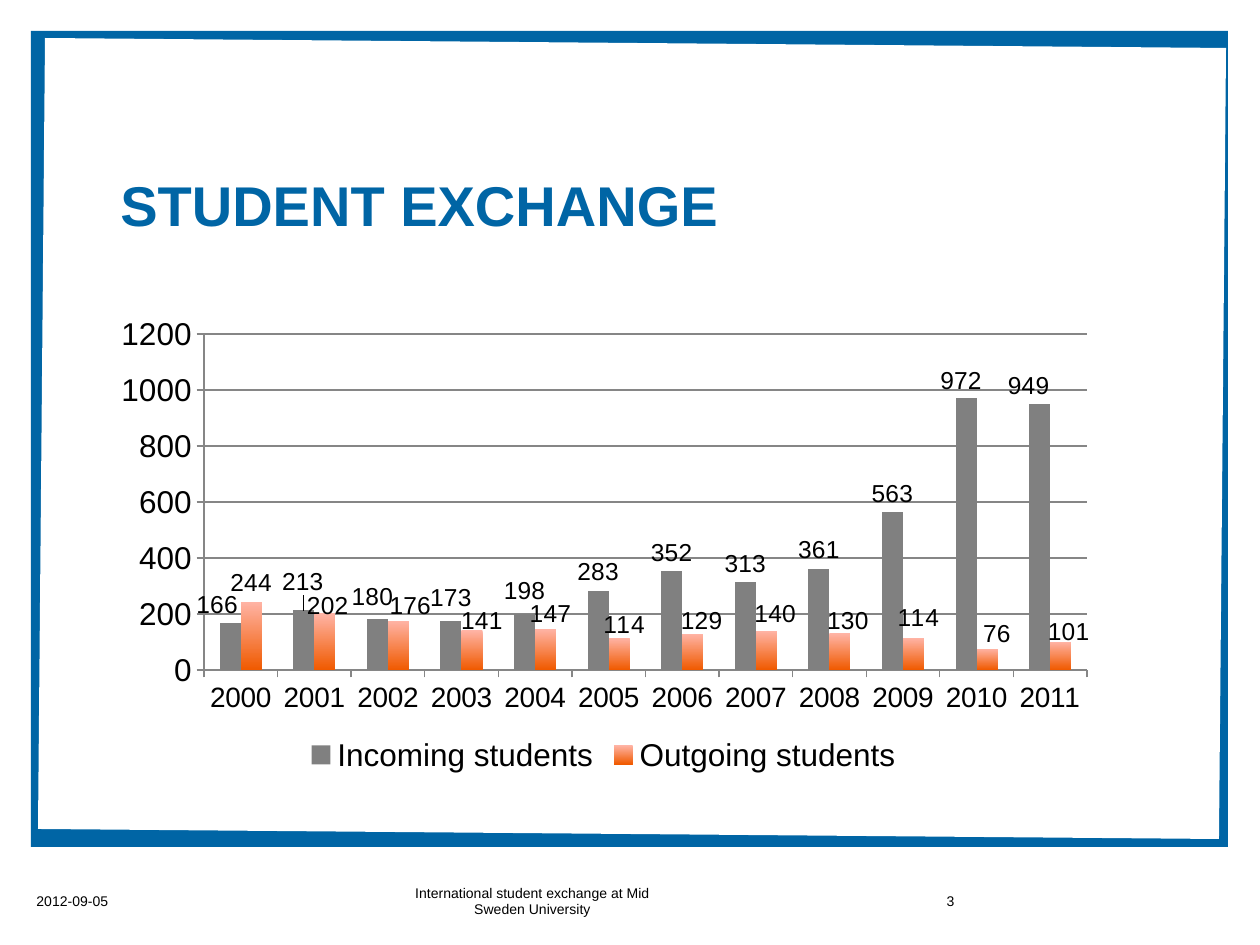
"""Build the student exchange slide with its framed column chart."""
from lxml import etree
from pptx import Presentation
from pptx.chart.data import CategoryChartData
from pptx.dml.color import RGBColor
from pptx.enum.chart import XL_CHART_TYPE, XL_LABEL_POSITION, XL_LEGEND_POSITION, XL_TICK_MARK
from pptx.enum.shapes import MSO_SHAPE
from pptx.enum.text import MSO_ANCHOR, PP_ALIGN
from pptx.oxml.ns import qn
from pptx.util import Pt

PX = 914400 / 126
BLUE = RGBColor(0x00, 0x65, 0xA5)
WHITE = RGBColor(0xFF, 0xFF, 0xFF)
BLACK = RGBColor(0x00, 0x00, 0x00)
GRAY = RGBColor(0x80, 0x80, 0x80)
LINE_GRAY = RGBColor(0x86, 0x86, 0x86)
PINK = RGBColor(0xFF, 0xB4, 0xA6)
ORANGE = RGBColor(0xF0, 0x5A, 0x00)


def px(*lengths):
    return [round(v * PX) for v in lengths]


def add_layout(parent, index, **values):
    layout = etree.Element(qn("c:layout"))
    manual = etree.SubElement(layout, qn("c:manualLayout"))
    for tag, value in values.items():
        etree.SubElement(manual, qn(f"c:{tag}"), val=str(value))
    parent.insert(index, layout)


prs = Presentation()
prs.slide_width, prs.slide_height = px(1260, 945)
s = prs.slides.add_slide(prs.slide_layouts[6])

frame = s.shapes.add_shape(MSO_SHAPE.RECTANGLE, *px(31, 31, 1197, 816))
builder = s.shapes.build_freeform(45, 38, scale=PX)
builder.add_line_segments([(1226, 48), (1219, 839), (38, 829)], close=True)
panel = builder.convert_to_shape()
for sp, color in ((frame, BLUE), (panel, WHITE)):
    sp.shadow.inherit = False
    sp.fill.solid()
    sp.fill.fore_color.rgb = color
    sp.line.fill.background()

TEXTS = [
    ("STUDENT EXCHANGE", (108, 157, 804, 94), 32, BLUE, True, PP_ALIGN.LEFT),
    ("2012-09-05", (24, 876, 294, 50), 8, BLACK, False, PP_ALIGN.LEFT),
    ("3", (738, 876, 229, 50), 8, BLACK, False, PP_ALIGN.RIGHT),
    ("International student exchange at Mid Sweden University",
     (402, 876, 261, 50), 8, BLACK, False, PP_ALIGN.CENTER),
]
for text, box, size, color, bold, align in TEXTS:
    tf = s.shapes.add_textbox(*px(*box)).text_frame
    tf.word_wrap = True
    tf.vertical_anchor = MSO_ANCHOR.MIDDLE
    p = tf.paragraphs[0]
    p.text = text
    p.alignment = align
    p.font.name = "Arial"
    p.font.size = Pt(size)
    p.font.bold = bold
    p.font.color.rgb = color

data = CategoryChartData()
data.categories = [str(year) for year in range(2000, 2012)]
data.add_series("Incoming students",
                [166, 213, 180, 173, 198, 283, 352, 313, 361, 563, 972, 949])
data.add_series("Outgoing students",
                [244, 202, 176, 141, 147, 114, 129, 140, 130, 114, 76, 101])
LEFT, TOP, WIDTH, HEIGHT = 101, 307, 1005, 472
chart = s.shapes.add_chart(XL_CHART_TYPE.COLUMN_CLUSTERED,
                           *px(LEFT, TOP, WIDTH, HEIGHT), data).chart
chart.has_title = False
chart.font.name = "Arial"
chart.font.size = Pt(18)
chart.font.color.rgb = BLACK
chart.has_legend = True
chart.legend.position = XL_LEGEND_POSITION.BOTTOM
chart.legend.include_in_layout = False

plot_area = chart._chartSpace.chart.plotArea
for old in plot_area.findall(qn("c:layout")):
    plot_area.remove(old)
add_layout(plot_area, 0, layoutTarget="inner", xMode="edge", yMode="edge",
           x=(204 - LEFT) / WIDTH, y=(334 - TOP) / HEIGHT,
           w=883 / WIDTH, h=336 / HEIGHT)

for axis in (chart.category_axis, chart.value_axis):
    axis.major_tick_mark = XL_TICK_MARK.OUTSIDE
    axis.minor_tick_mark = XL_TICK_MARK.NONE
    axis.format.line.color.rgb = LINE_GRAY
chart.category_axis.tick_labels.font.size = Pt(16)
chart.value_axis.minimum_scale = 0
chart.value_axis.maximum_scale = 1200
chart.value_axis.major_unit = 200
chart.value_axis.has_major_gridlines = True
chart.value_axis.major_gridlines.format.line.color.rgb = LINE_GRAY

plot = chart.plots[0]
plot.gap_width = 150
plot.overlap = 0
plot.vary_by_categories = False
incoming, outgoing = plot.series
incoming.format.fill.solid()
incoming.format.fill.fore_color.rgb = GRAY
fill = outgoing.format.fill
fill.gradient()
fill.gradient_angle = 270
for stop, color in zip(fill.gradient_stops, (PINK, ORANGE)):
    stop.color.rgb = color

LABEL_SHIFTS = [
    {0: (-13, 0), 1: (-1, -10), 2: (-5, -4), 3: (0, -5), 4: (0, -5),
     10: (-5, 2), 11: (-11, 0)},
    {1: (3, 11), 2: (12, 4), 3: (10, 9), 4: (5, 4), 5: (5, 6), 6: (9, 6),
     7: (9, 2), 8: (8, 6), 9: (5, -1), 10: (10, 4), 11: (8, 9)},
]
for series, shifts in zip(plot.series, LABEL_SHIFTS):
    labels = series.data_labels
    labels.show_value = True
    labels.position = XL_LABEL_POSITION.OUTSIDE_END
    labels.font.size = Pt(14)
    for i in shifts:
        label = series.points[i].data_label
        label.font.size = Pt(14)
        label.position = XL_LABEL_POSITION.OUTSIDE_END
    for node, (dx, dy) in zip(labels._element.findall(qn("c:dLbl")), shifts.values()):
        add_layout(node, 1, x=dx / WIDTH, y=dy / HEIGHT)

prs.save("out.pptx")
